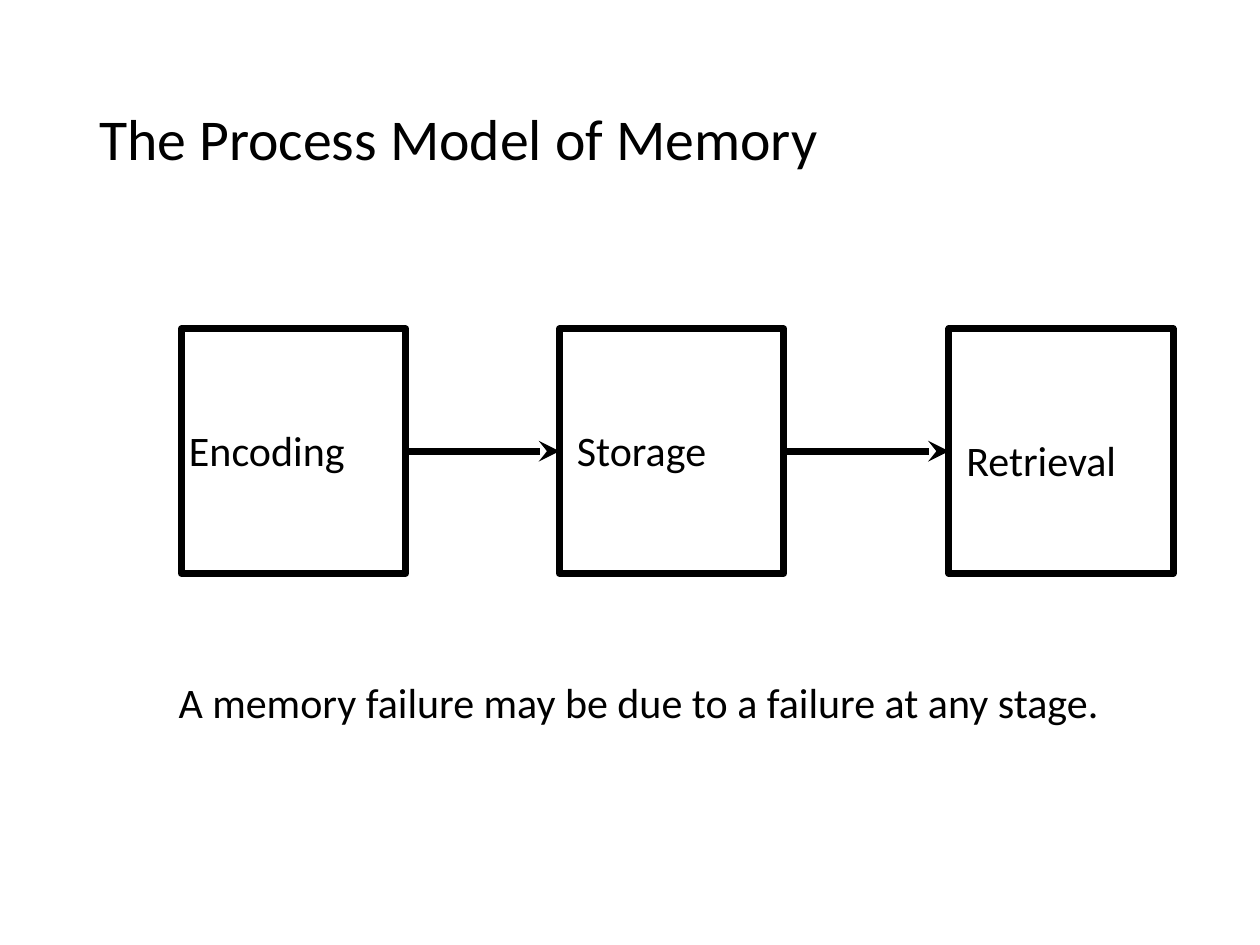
from dataclasses import dataclass
from itertools import pairwise

from lxml.etree import SubElement
from pptx import Presentation
from pptx.dml.color import RGBColor
from pptx.enum.shapes import MSO_CONNECTOR, MSO_SHAPE
from pptx.enum.text import MSO_ANCHOR, MSO_AUTO_SIZE
from pptx.oxml.ns import qn
from pptx.util import Cm, Pt


@dataclass(frozen=True)
class Theme:
    font: str = "Calibri"
    ink: RGBColor = RGBColor(0, 0, 0)
    title_size: int = 33
    body_size: int = 24
    stroke: int = 4


THEME = Theme()
TITLE = "The Process Model of Memory"
CONCLUSION = "A memory failure may be due to a failure at any stage."
STAGES = [
    {"name": "Encoding", "left": 3.66, "label": (3.56, 8.43, 4.09)},
    {"name": "Storage", "left": 11.28, "label": (11.38, 8.43, 3.33)},
    {"name": "Retrieval", "left": 19.13, "label": (19.23, 8.64, 3.89)},
]
STAGE_TOP, STAGE_WIDTH, STAGE_HEIGHT = 6.63, 4.52, 4.93
LINE_HEIGHT = 1.27
RIGHT_SIDE, LEFT_SIDE = 3, 1


def add_text(slide, wording, left, top, width, height, size):
    box = slide.shapes.add_textbox(Cm(left), Cm(top), Cm(width), Cm(height))
    frame = box.text_frame
    frame.text = wording
    frame.word_wrap = False
    font = frame.paragraphs[0].runs[0].font
    font.name, font.size = THEME.font, Pt(size)
    font.color.rgb = THEME.ink
    return frame


def add_label(slide, wording, left, top, width):
    frame = add_text(slide, wording, left, top, width, LINE_HEIGHT, THEME.body_size)
    frame.auto_size = MSO_AUTO_SIZE.SHAPE_TO_FIT_TEXT


def style_line(line):
    line.color.rgb = THEME.ink
    line.width = Pt(THEME.stroke)


def add_stage(slide, left):
    stage = slide.shapes.add_shape(
        MSO_SHAPE.RECTANGLE, Cm(left), Cm(STAGE_TOP), Cm(STAGE_WIDTH), Cm(STAGE_HEIGHT)
    )
    stage.shadow.inherit = False
    stage.fill.background()
    style_line(stage.line)
    return stage


def add_arrow(slide, source, target):
    arrow = slide.shapes.add_connector(MSO_CONNECTOR.STRAIGHT, 0, 0, 0, 0)
    arrow.begin_connect(source, RIGHT_SIDE)
    arrow.end_connect(target, LEFT_SIDE)
    style_line(arrow.line)
    SubElement(arrow.line._get_or_add_ln(), qn("a:tailEnd"), type="stealth")
    SubElement(arrow._element.spPr, qn("a:effectLst"))


def main():
    deck = Presentation()
    deck.slide_width, deck.slide_height = Cm(25.4), Cm(19.05)
    slide = deck.slides.add_slide(deck.slide_layouts[6])

    heading = add_text(slide, TITLE, 1.75, 1.02, 21.9, 3.68, THEME.title_size)
    heading.word_wrap = True
    heading.vertical_anchor = MSO_ANCHOR.MIDDLE
    heading.paragraphs[0].line_spacing = 0.9

    boxes = [add_stage(slide, stage["left"]) for stage in STAGES]
    for source, target in pairwise(boxes):
        add_arrow(slide, source, target)
    for stage in STAGES:
        add_label(slide, stage["name"], *stage["label"])
    add_label(slide, CONCLUSION, 3.35, 13.51, 20.9)

    deck.save("out.pptx")


if __name__ == "__main__":
    main()
